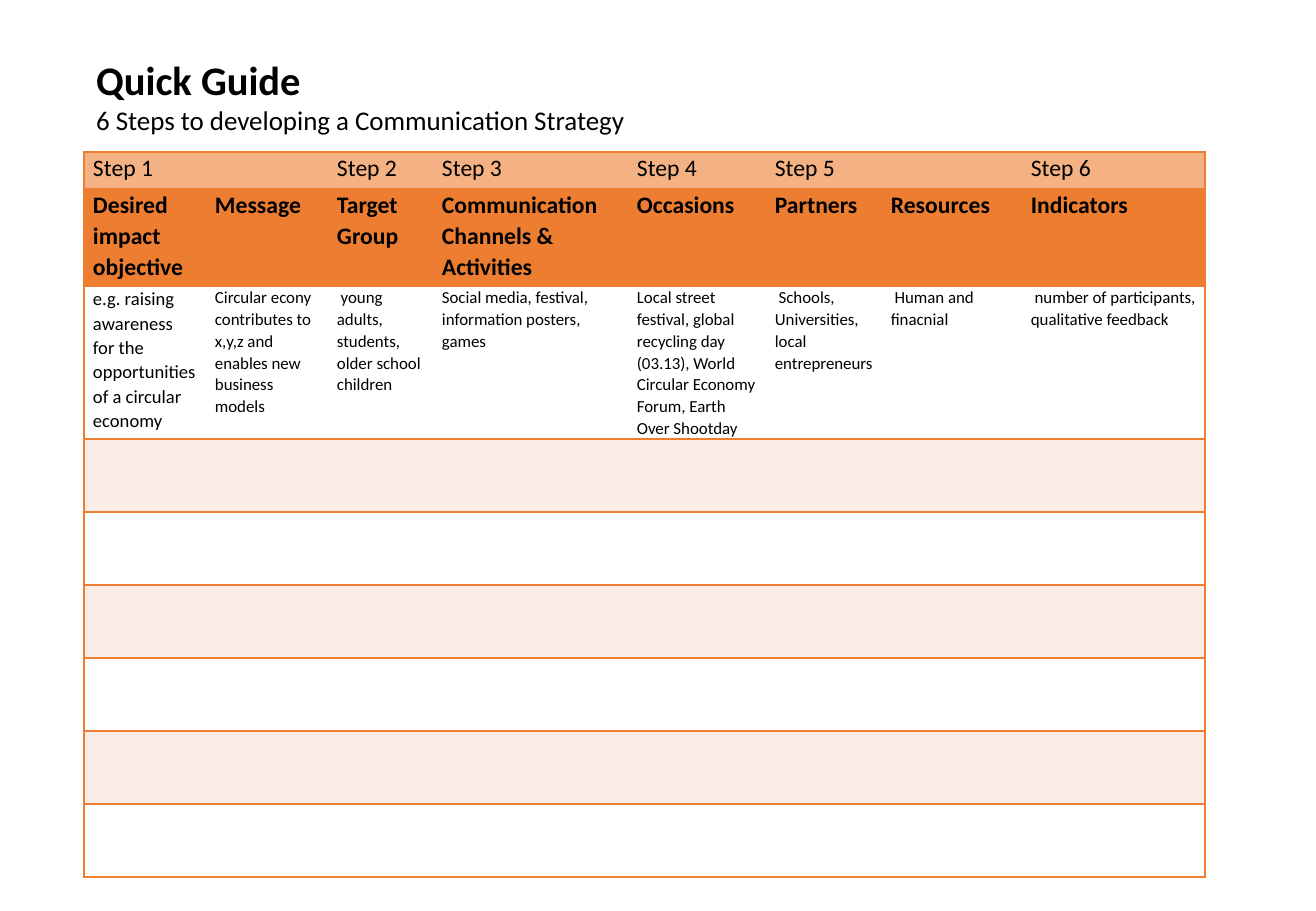
import pptx
import pptx.util
import pptx.dml.color
import pptx.enum.text
import pptx.oxml

TITLE = "Quick Guide"
SUBTITLE = "6 Steps to developing a Communication Strategy"
STEPS = ["Step 1", "", "Step 2", "Step 3", "Step 4", "Step 5", "", "Step 6"]
HEADINGS = [
    "Desired impact objective", "Message", "Target Group",
    "Communication Channels & Activities", "Occasions", "Partners",
    "Resources", "Indicators",
]
EXAMPLES = [
    "e.g. raising awareness for the opportunities of a circular economy",
    "Circular econy contributes to x,y,z and enables new business models",
    " young adults, students, older school children",
    "Social media, festival, information posters, games",
    "Local street festival, global recycling day (03.13), World Circular Economy Forum, Earth Over Shootday",
    " Schools, Universities, local entrepreneurs",
    " Human and finacnial",
    " number of participants, qualitative feedback",
]
EMPTY_ROWS = 6

PAGE = (1316, 911)
TITLE_BOX = (84, 49, 1042, 94)
TABLE_ORIGIN = (84, 152)
COLUMNS = [122, 122, 105, 195, 138, 116, 140, 183]
STEP_HEIGHT, HEADING_HEIGHT, EXAMPLE_HEIGHT, EMPTY_HEIGHT = 37, 97, 152, 73
CELL_INSET = 9

THEME = {
    "font": "Calibri",
    "text": "000000",
    "step": "F4B183",
    "accent": "ED7D31",
    "band": "FCECE8",
    "plain": "FFFFFF",
    "title_size": 24,
    "subtitle_size": 16,
    "heading_size": 14,
    "lead_size": 11,
    "body_size": 10,
    "border": 1,
}


def px(length):
    return pptx.util.Emu(round(length * 914400 / 121.5))


def color(name):
    return pptx.dml.color.RGBColor.from_string(THEME[name])


def apply(target, values):
    for name, value in values.items():
        setattr(target, name, value)


def write(para, text, size, bold=False, **spacing):
    apply(para, {"alignment": pptx.enum.text.PP_ALIGN.LEFT,
                 "space_before": pptx.util.Pt(0), **spacing})
    span = para.add_run()
    span.text = text
    apply(span.font, {"name": THEME["font"], "size": pptx.util.Pt(THEME[size]), "bold": bold})
    span.font.color.rgb = color("text")


def draw_borders(cell, visible):
    properties = cell._tc.get_or_add_tcPr()
    width = pptx.util.Pt(THEME["border"])
    solid = f'<a:solidFill><a:srgbClr val="{THEME["accent"]}"/></a:solidFill>'
    for side in "LRTB":
        paint = solid if side in visible else "<a:noFill/>"
        properties.append(pptx.oxml.parse_xml(
            f'<a:ln{side} xmlns:a="http://schemas.openxmlformats.org/drawingml/2006/main" '
            f'w="{width}">{paint}</a:ln{side}>'))


def add_heading(page):
    box = page.shapes.title
    apply(box, dict(zip(("left", "top", "width", "height"), map(px, TITLE_BOX))))
    frame = box.text_frame
    apply(frame, {"word_wrap": True,
                  "auto_size": pptx.enum.text.MSO_AUTO_SIZE.NONE,
                  "vertical_anchor": pptx.enum.text.MSO_ANCHOR.TOP})
    write(frame.paragraphs[0], TITLE, "title_size", True, line_spacing=1.0)
    write(frame.add_paragraph(), SUBTITLE, "subtitle_size", line_spacing=1.0)


def add_guide(page):
    blank = [""] * len(COLUMNS)
    rows = [
        (STEP_HEIGHT, "step", "heading_size", False, STEPS),
        (HEADING_HEIGHT, "accent", "heading_size", True, HEADINGS),
        (EXAMPLE_HEIGHT, "plain", "body_size", False, EXAMPLES),
    ]
    rows += [(EMPTY_HEIGHT, ("band", "plain")[index % 2], "body_size", False, blank)
             for index in range(EMPTY_ROWS)]
    extent = (sum(COLUMNS), sum(row[0] for row in rows))
    table = page.shapes.add_table(
        len(rows), len(COLUMNS), *map(px, TABLE_ORIGIN + extent)).table
    apply(table, {"first_row": False, "horz_banding": False})
    for column, width in zip(table.columns, COLUMNS):
        column.width = px(width)
    last = len(COLUMNS) - 1
    for row, (height, fill, size, bold, texts) in zip(table.rows, rows):
        row.height = px(height)
        for index, (cell, text) in enumerate(zip(row.cells, texts)):
            apply(cell, {"margin_left": px(CELL_INSET), "margin_right": px(CELL_INSET),
                         "margin_top": 0, "margin_bottom": 0})
            draw_borders(cell, "TB" + {0: "L", last: "R"}.get(index, ""))
            cell.fill.solid()
            cell.fill.fore_color.rgb = color(fill)
            if text:
                lead = texts is EXAMPLES and index == 0
                write(cell.text_frame.paragraphs[0], text, "lead_size" if lead else size,
                      bold, line_spacing=1.07, space_after=pptx.util.Pt(8))


def main():
    deck = pptx.Presentation()
    apply(deck, dict(zip(("slide_width", "slide_height"), map(px, PAGE))))
    page = deck.slides.add_slide(deck.slide_layouts[5])
    add_heading(page)
    add_guide(page)
    deck.save("out.pptx")


if __name__ == "__main__":
    main()
